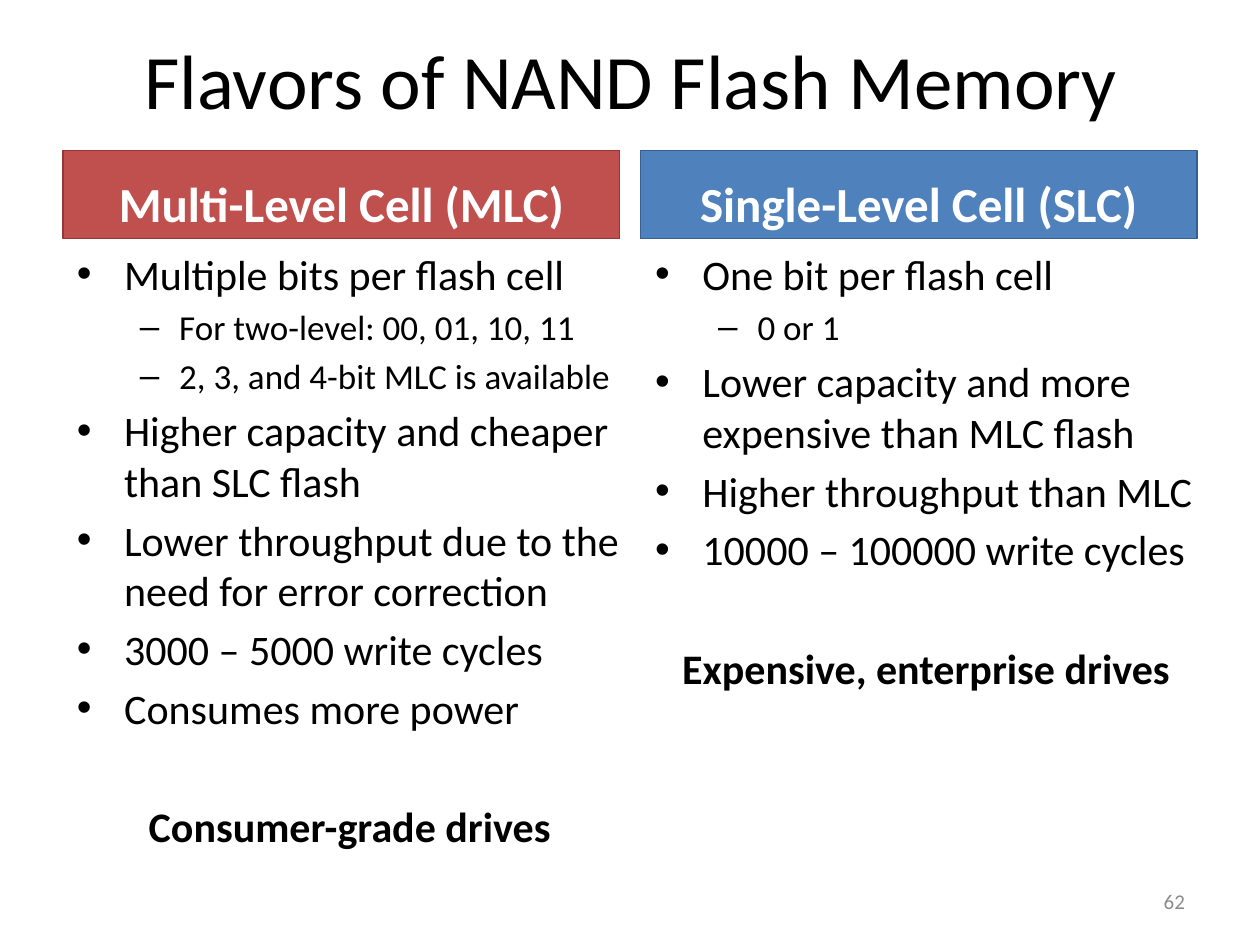
from pptx import Presentation
from pptx.dml.color import RGBColor
from pptx.enum.text import MSO_ANCHOR, MSO_AUTO_SIZE, PP_ALIGN
from pptx.oxml.ns import qn
from pptx.util import Pt
from lxml.etree import SubElement

COMPARISON_LAYOUT = 4
# Per level: text size, left margin, hanging indent, bullet
LEVELS = [(24, 27, 27, "•"), (20, 58.5, 22.5, "–")]


def color(hex_value):
    return RGBColor.from_string(hex_value)


class SlideBuilder:
    font = "Calibri"

    def __init__(self, slide):
        self.slide = slide

    def place(self, shape, box, anchor):
        shape.left, shape.top, shape.width, shape.height = map(Pt, box)
        frame = shape.text_frame
        frame.word_wrap = True
        frame.auto_size = MSO_AUTO_SIZE.NONE
        frame.vertical_anchor = anchor
        return frame

    def add_text(self, paragraph, text, size, hex_value="000000", bold=False,
                 align=PP_ALIGN.LEFT, before=0):
        paragraph.alignment = align
        paragraph.space_before = Pt(before)
        run = paragraph.add_run()
        run.text = text
        run.font.name = self.font
        run.font.size = Pt(size)
        run.font.bold = bold
        run.font.color.rgb = color(hex_value)

    def indent(self, paragraph, margin, hanging, bullet=None):
        props = paragraph._p.get_or_add_pPr()
        props.set("marL", str(Pt(margin)))
        props.set("indent", str(-Pt(hanging)))
        if bullet:
            SubElement(props, qn("a:buChar")).set("char", bullet)
        else:
            SubElement(props, qn("a:buNone"))

    def title(self, text, box):
        frame = self.place(self.slide.shapes.title, box, MSO_ANCHOR.MIDDLE)
        self.add_text(frame.paragraphs[0], text, 44, align=PP_ALIGN.CENTER)

    def heading(self, idx, text, box, fill, line):
        banner = self.slide.placeholders[idx]
        frame = self.place(banner, box, MSO_ANCHOR.BOTTOM)
        banner.fill.solid()
        banner.fill.fore_color.rgb = color(fill)
        banner.line.color.rgb = color(line)
        banner.line.width = Pt(0.75)
        self.add_text(frame.paragraphs[0], text, 28, "FFFFFF", True,
                      PP_ALIGN.CENTER, 5.6)

    def bullets(self, idx, items, conclusion, box):
        frame = self.place(self.slide.placeholders[idx], box, MSO_ANCHOR.TOP)
        paragraph = frame.paragraphs[0]
        for level, text in items:
            size, margin, hanging, bullet = LEVELS[level]
            paragraph.level = level
            self.add_text(paragraph, text, size, before=size * 0.2)
            self.indent(paragraph, margin, hanging, bullet)
            paragraph = frame.add_paragraph()
        # The conclusion stands one line below the list
        self.add_text(paragraph, conclusion, 24, bold=True,
                      align=PP_ALIGN.CENTER, before=38.8)
        self.indent(paragraph, 0, 0)

    def page_number(self, text, box):
        number = self.slide.shapes.add_textbox(*map(Pt, box))
        frame = self.place(number, box, MSO_ANCHOR.MIDDLE)
        self.add_text(frame.paragraphs[0], text, 12, "8C8C8C",
                      align=PP_ALIGN.RIGHT)


def main():
    deck = Presentation()
    deck.slide_width, deck.slide_height = Pt(720), Pt(540)
    layout = deck.slide_layouts[COMPARISON_LAYOUT]
    builder = SlideBuilder(deck.slides.add_slide(layout))

    builder.title("Flavors of NAND Flash Memory", (36.7, 0, 648, 90))

    # Multi-level cell column
    builder.heading(1, "Multi-Level Cell (MLC)", (36, 85.8, 318.2, 50.4),
                    "C0504D", "953735")
    builder.bullets(2, [
        (0, "Multiple bits per flash cell"),
        (1, "For two-level: 00, 01, 10, 11"),
        (1, "2, 3, and 4-bit MLC is available"),
        (0, "Higher capacity and cheaper than SLC flash"),
        (0, "Lower throughput due to the need for error correction"),
        (0, "3000 – 5000 write cycles"),
        (0, "Consumes more power"),
    ], "Consumer-grade drives", (36.7, 138.2, 326.2, 368.6))

    # Single-level cell column
    builder.heading(3, "Single-Level Cell (SLC)", (365.8, 85.8, 318.2, 50.4),
                    "4F81BD", "376092")
    builder.bullets(4, [
        (0, "One bit per flash cell"),
        (1, "0 or 1"),
        (0, "Lower capacity and more expensive than MLC flash"),
        (0, "Higher throughput than MLC"),
        (0, "10000 – 100000 write cycles"),
    ], "Expensive, enterprise drives", (367.2, 138.2, 324, 352))

    builder.page_number("62", (516.2, 500.4, 168, 28.8))
    deck.save("out.pptx")


if __name__ == "__main__":
    main()
